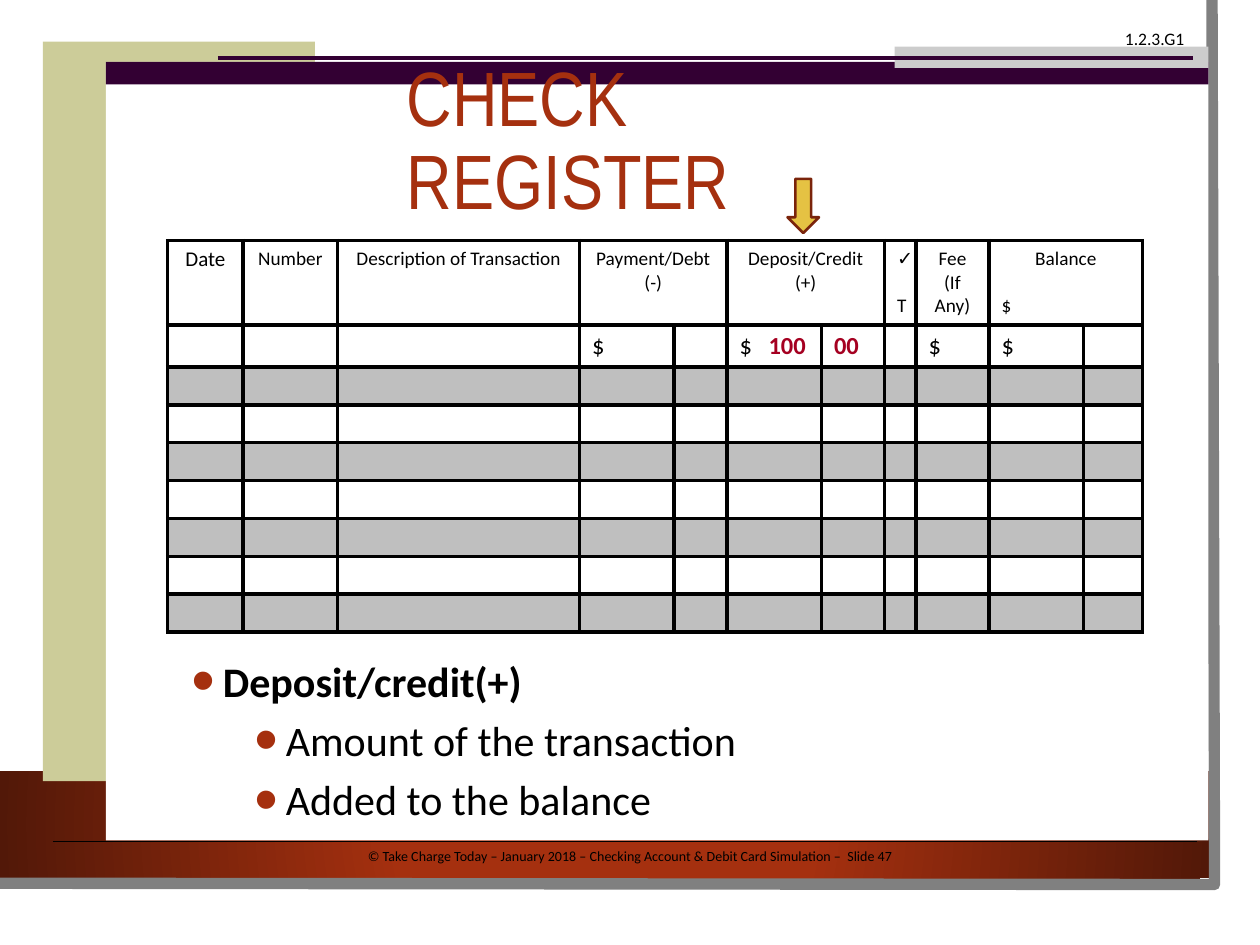
from lxml import etree
from pptx import Presentation
from pptx.dml.color import RGBColor
from pptx.enum.shapes import MSO_CONNECTOR, MSO_SHAPE
from pptx.enum.text import MSO_ANCHOR, PP_ALIGN
from pptx.oxml import parse_xml
from pptx.oxml.ns import nsdecls, qn
from pptx.util import Inches, Pt

RECTANGLE = MSO_SHAPE.RECTANGLE
DOWN_ARROW = MSO_SHAPE.DOWN_ARROW
STRAIGHT = MSO_CONNECTOR.STRAIGHT
MIDDLE, TOP = MSO_ANCHOR.MIDDLE, MSO_ANCHOR.TOP
LEFT, CENTER = PP_ALIGN.LEFT, PP_ALIGN.CENTER

BLACK, WHITE, RUST, PLUM = "000000", "FFFFFF", "A5300F", "330033"
STRIPE, DEPOSIT = "BFBFBF", "A50021"
COLUMNS = [0.6, 0.75, 1.92, 0.75, 0.42, 0.75, 0.5, 0.25, 0.58, 0.75, 0.47]
ROWS = [0.67, 0.33] + [0.3] * 7
HEADERS = {0: "Date", 1: "Number", 2: "Description of Transaction",
           3: "Payment/Debt\n(-)", 5: "Deposit/Credit\n(+)", 7: "✓\nT",
           8: "Fee (If Any)", 9: "Balance\n$"}
ENTRIES = {3: "$", 5: "$\t100", 6: "00", 8: "$", 9: "$"}


def color(value):
    """Turn a hex string into a colour."""
    return RGBColor.from_string(value)


def style_font(font, size, value=BLACK, bold=False, name="Calibri"):
    """Set the look of a font."""
    font.name, font.size, font.bold = name, Pt(size), bold
    font.color.rgb = color(value)


def add_block(page, box, fill, kind=RECTANGLE):
    """Add a filled shape without outline or shadow."""
    block = page.shapes.add_shape(kind, *map(Inches, box))
    block.shadow.inherit = False
    block.fill.solid()
    block.fill.fore_color.rgb = color(fill)
    block.line.fill.background()
    return block


def add_rule(page, left, right, top, value, width):
    """Add a horizontal rule."""
    rule = page.shapes.add_connector(
        STRAIGHT, Inches(left), Inches(top), Inches(right), Inches(top))
    rule.line.color.rgb = color(value)
    rule.line.width = Pt(width)
    etree.SubElement(rule._element.spPr, qn("a:effectLst"))


def add_text(page, box, lines, size, value=BLACK, name="Calibri", anchor=TOP):
    """Add a wrapping text box with one paragraph per line."""
    frame = page.shapes.add_textbox(*map(Inches, box)).text_frame
    frame.word_wrap = True
    frame.vertical_anchor = anchor
    frame.text = "\n".join(lines)
    for para in frame.paragraphs:
        for span in para.runs:
            style_font(span.font, size, value, name=name)
    return frame


def add_footer_band(page, box):
    """Add the band with a gradient that darkens towards its edges."""
    band = add_block(page, box, RUST)
    properties = band._element.spPr
    gradient = parse_xml(
        f'<a:gradFill {nsdecls("a")} rotWithShape="1"><a:gsLst>'
        '<a:gs pos="34000"><a:srgbClr val="A5300F"/></a:gs>'
        '<a:gs pos="100000"><a:srgbClr val="521808"/></a:gs></a:gsLst>'
        '<a:path path="circle"><a:fillToRect l="50000" t="50000" r="50000" '
        'b="50000"/></a:path></a:gradFill>')
    properties.replace(properties.find(qn("a:solidFill")), gradient)


def add_edge(page, box):
    """Add the grey edge along the right and bottom of a box."""
    left, top, width, height = box
    right, bottom = left + width, top + height
    builder = page.shapes.build_freeform(Inches(right - 0.02), Inches(top))
    builder.add_line_segments(
        [(Inches(right), Inches(bottom)), (Inches(left), Inches(bottom - 0.01))],
        close=False)
    edge = builder.convert_to_shape()
    edge.shadow.inherit = False
    edge.fill.background()
    edge.line.color.rgb = color("808080")
    edge.line.width = Pt(6.5)


def add_frame(page):
    """Draw the decorated page frame, footer and page code."""
    add_footer_band(page, (0, 6.12, 9.6, 0.85))
    add_edge(page, (-0.02, 0, 9.66, 7.02))
    footer = add_text(page, (0.42, 6.68, 9.17, 0.24), [
        "© Take Charge Today – January 2018 – Checking Account & "
        "Debit Card Simulation –  Slide 47"], 8)
    footer.paragraphs[0].alignment = CENTER
    add_block(page, (0.34, 0.33, 2.16, 5.87), "CCCC99")
    add_block(page, (0.84, 0.49, 8.75, 6.18), WHITE)
    add_block(page, (0.84, 0.49, 8.75, 0.18), PLUM)
    add_block(page, (7.1, 0.37, 2.49, 0.17), "CCCCCC")
    add_rule(page, 1.73, 9.47, 0.46, PLUM, 2)
    add_rule(page, 0.42, 9.5, 6.68, BLACK, 0.75)
    add_text(page, (8.83, 0.17, 0.75, 0.27), ["1.2.3.G1"], 10)


def add_title(page, box):
    """Add the slide title."""
    frame = add_text(page, box, ["CHECK REGISTER"], 44, RUST, "Arial Narrow", MIDDLE)
    frame.paragraphs[0].line_spacing = 0.9


def add_bullets(page, box):
    """Add the heading bullet and its two details."""
    frame = add_text(page, box, [
        "Deposit/credit(+)", "Amount of the transaction",
        "Added to the balance"], 24, anchor=MIDDLE)
    for index, para in enumerate(frame.paragraphs):
        level = min(index, 1)
        para.level = level
        if level:
            para.space_before = Pt(5)
        properties = para._p.get_or_add_pPr()
        properties.set("marL", str(Inches(0.25 + 0.5 * level)))
        properties.set("indent", str(Inches(-0.25)))
        tint = etree.SubElement(properties, qn("a:buClr"))
        etree.SubElement(tint, qn("a:srgbClr"), val=RUST)
        etree.SubElement(properties, qn("a:buSzPct"), val="160000")
        etree.SubElement(properties, qn("a:buFont"), typeface="Arial")
        etree.SubElement(properties, qn("a:buChar"), char="•")
        para.runs[0].font.bold = level == 0


def add_borders(cell):
    """Give a cell black borders on all sides, ahead of its fill."""
    properties = cell._tc.get_or_add_tcPr()
    for index, side in enumerate(("lnL", "lnR", "lnT", "lnB")):
        properties.insert(index, parse_xml(
            f'<a:{side} {nsdecls("a")} w="{Pt(2.25)}"><a:solidFill>'
            f'<a:srgbClr val="{BLACK}"/></a:solidFill></a:{side}>'))


def fill_header(cell, column):
    """Write one column heading."""
    cell.text_frame.text = HEADERS[column]
    for para in cell.text_frame.paragraphs:
        para.alignment = LEFT if para.text == "$" else CENTER
        if para.text in ("T", "$"):
            para.space_before = Pt(13.5)
        style_font(para.runs[0].font, 11 if column else 12)


def fill_entry(cell, column):
    """Write one entry of the first register row."""
    para = cell.text_frame.paragraphs[0]
    tabs = etree.SubElement(para._p.get_or_add_pPr(), qn("a:tabLst"))
    etree.SubElement(tabs, qn("a:tab"), pos=str(Inches(0.23)), algn="l")
    for part in ENTRIES[column].partition("\t"):
        if part:
            span = para.add_run()
            span.text = part
            amount = part.isdigit()
            style_font(span.font, 14, DEPOSIT if amount else BLACK, amount)


def add_register(page, box):
    """Add the check register table."""
    table = page.shapes.add_table(
        len(ROWS), len(COLUMNS), *map(Inches, box)).table
    table.first_row = table.horz_banding = False
    for column, width in zip(table.columns, COLUMNS):
        column.width = Inches(width)
    for row, height in zip(table.rows, ROWS):
        row.height = Inches(height)
    for column in (3, 5, 9):
        table.cell(0, column).merge(table.cell(0, column + 1))
    for row in range(len(ROWS)):
        for column in range(len(COLUMNS)):
            cell = table.cell(row, column)
            cell.fill.solid()
            cell.fill.fore_color.rgb = color(
                STRIPE if row and row % 2 == 0 else WHITE)
            add_borders(cell)
            if row == 0 and column in HEADERS:
                fill_header(cell, column)
            elif row == 1 and column in ENTRIES:
                fill_entry(cell, column)
            else:
                para = cell.text_frame.paragraphs[0]
                etree.SubElement(para._p, qn("a:endParaRPr"), sz="1200")


def add_pointer(page, box):
    """Add the arrow above the deposit column."""
    pointer = add_block(page, box, "E5C243", DOWN_ARROW)
    pointer.line.color.rgb = color("7A240B")
    pointer.line.width = Pt(1.5)


def main():
    """Build and save the deck."""
    deck = Presentation()
    deck.slide_width, deck.slide_height = Inches(10), Inches(7.5)
    page = deck.slides.add_slide(deck.slide_layouts[6])
    add_frame(page)
    add_title(page, (3.13, 0.51, 4.33, 1.25))
    add_bullets(page, (1.42, 5.08, 7.92, 1.58))
    add_pointer(page, (6.25, 1.42, 0.25, 0.43))
    add_register(page, (1.33, 1.91, sum(COLUMNS), sum(ROWS)))
    deck.save("out.pptx")


if __name__ == "__main__":
    main()
